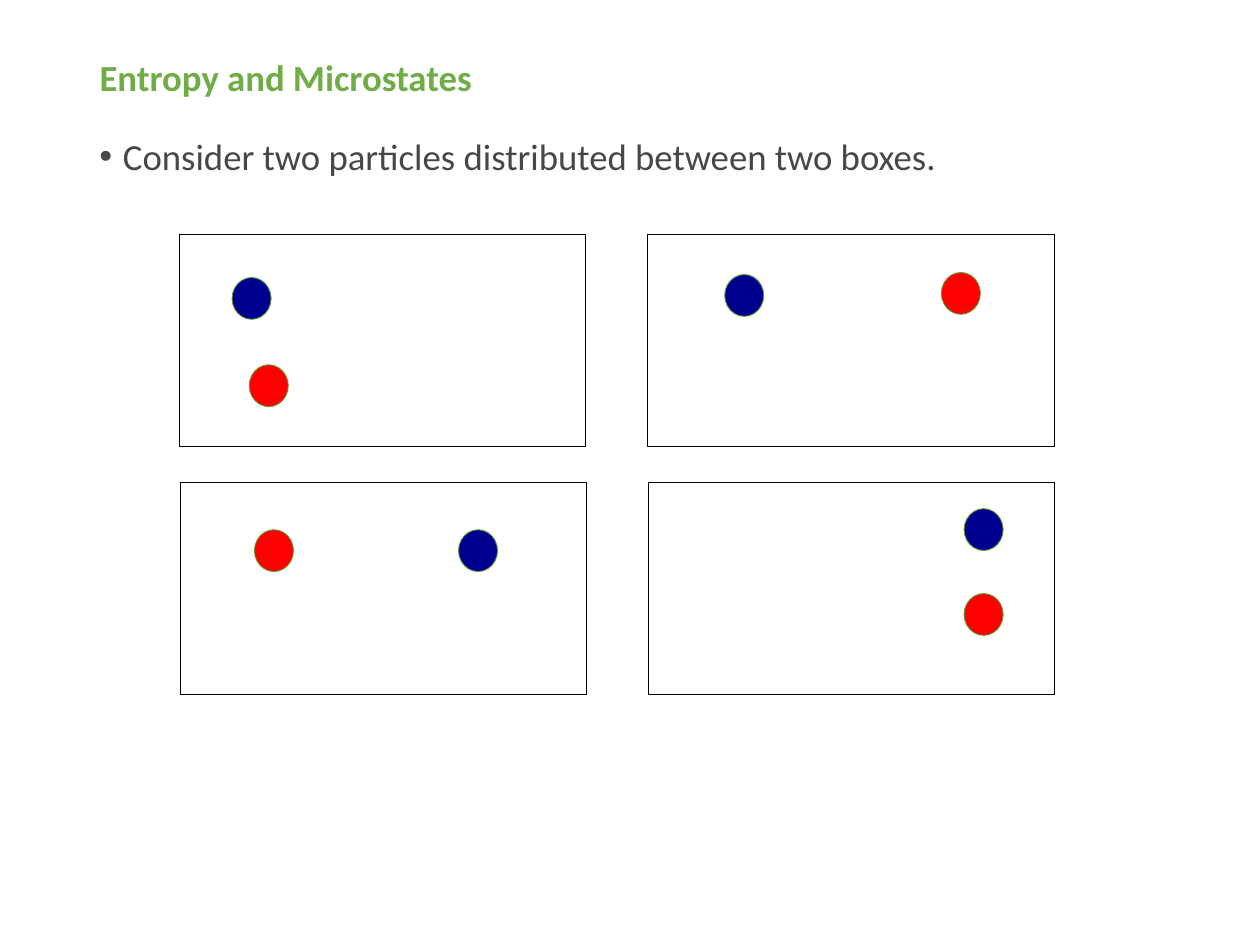
"""Build a slide of the four microstates of two particles in two boxes."""
from typing import NamedTuple, Optional

from lxml import etree
from pptx import Presentation
from pptx.dml.color import RGBColor
from pptx.enum.shapes import MSO_SHAPE
from pptx.enum.text import MSO_ANCHOR, PP_ALIGN
from pptx.oxml.ns import qn
from pptx.util import Pt

RECTANGLE, OVAL = MSO_SHAPE.RECTANGLE, MSO_SHAPE.OVAL
MIDDLE, TOP, LEFT = MSO_ANCHOR.MIDDLE, MSO_ANCHOR.TOP, PP_ALIGN.LEFT
TITLE_ONLY = 5
MARGIN, TEXT_WIDTH = 49.7, 620.6
FONT, FONT_SIZE = "Calibri", 21
BOX_LEFT, BOX_TOP, BOX_WIDTH, BOX_HEIGHT = 102.4, 133.7, 232.4, 121.3
COLUMN_STEP, ROW_STEP, ROW_SHIFT = 267.5, 142, 0.5
PARTICLE_WIDTH, PARTICLE_HEIGHT = 22.3, 23.9
BLUE, RED, GREEN, BLACK = "000090", "FF0000", "609A33", "000000"


class Microstate(NamedTuple):
    column: int
    row: int
    blue: tuple[float, float]
    red: tuple[float, float]


MICROSTATES = [
    Microstate(0, 0, (30.2, 24.9), (40, 74.8)),
    Microstate(1, 0, (44.2, 23.2), (168, 22)),
    Microstate(0, 1, (159.1, 27), (42.5, 27)),
    Microstate(1, 1, (180.5, 15), (180.5, 63.5)),
]


def rgb(color: str) -> RGBColor:
    return RGBColor.from_string(color)


def box_origin(state: Microstate) -> tuple[float, float]:
    left = BOX_LEFT + state.column * COLUMN_STEP + state.row * ROW_SHIFT
    return left, BOX_TOP + state.row * ROW_STEP


def add_outline(slide, kind, left: float, top: float, width: float, height: float,
                line: str, fill: Optional[str] = None) -> None:
    shape = slide.shapes.add_shape(kind, Pt(left), Pt(top), Pt(width), Pt(height))
    shape.shadow.inherit = False
    if fill:
        shape.fill.solid()
        shape.fill.fore_color.rgb = rgb(fill)
    else:
        shape.fill.background()
    shape.line.color.rgb = rgb(line)
    shape.line.width = Pt(0.5)


def add_particle(slide, state: Microstate, offset: tuple[float, float], fill: str) -> None:
    left, top = box_origin(state)
    add_outline(slide, OVAL, left + offset[0], top + offset[1],
                PARTICLE_WIDTH, PARTICLE_HEIGHT, GREEN, fill)


def write_line(shape, text: str, color: str, bold: bool, anchor):
    frame = shape.text_frame
    frame.word_wrap = True
    frame.vertical_anchor = anchor
    frame.margin_left = frame.margin_right = Pt(7.2)
    frame.margin_top = frame.margin_bottom = Pt(3.6)
    paragraph = frame.paragraphs[0]
    paragraph.alignment = LEFT
    paragraph.line_spacing = 0.9
    run = paragraph.add_run()
    run.text = text
    run.font.name = FONT
    run.font.size = Pt(FONT_SIZE)
    run.font.bold = bold
    run.font.color.rgb = rgb(color)
    return paragraph


def add_bullet(paragraph, indent: float) -> None:
    properties = paragraph._p.get_or_add_pPr()
    properties.set("marL", str(Pt(indent)))
    properties.set("indent", str(-Pt(indent)))
    etree.SubElement(properties, qn("a:buFont")).set("typeface", "Arial")
    etree.SubElement(properties, qn("a:buChar")).set("char", "•")


def main() -> None:
    deck = Presentation()
    deck.slide_width, deck.slide_height = Pt(720), Pt(540)
    slide = deck.slides.add_slide(deck.slide_layouts[TITLE_ONLY])

    title = slide.shapes.title
    title.left, title.top = Pt(MARGIN), Pt(28.8)
    title.width, title.height = Pt(TEXT_WIDTH), Pt(33.1)
    write_line(title, "Entropy and Microstates", "70AD47", True, MIDDLE)

    statement = slide.shapes.add_textbox(Pt(MARGIN), Pt(75.6), Pt(TEXT_WIDTH), Pt(298.8))
    sentence = write_line(statement, "Consider two particles distributed between two boxes.",
                          "464846", False, TOP)
    add_bullet(sentence, 13.5)

    for state in MICROSTATES:
        add_outline(slide, RECTANGLE, *box_origin(state), BOX_WIDTH, BOX_HEIGHT, BLACK)
    for state in MICROSTATES:
        add_particle(slide, state, state.blue, BLUE)
    for state in MICROSTATES:
        add_particle(slide, state, state.red, RED)

    deck.save("out.pptx")


if __name__ == "__main__":
    main()
